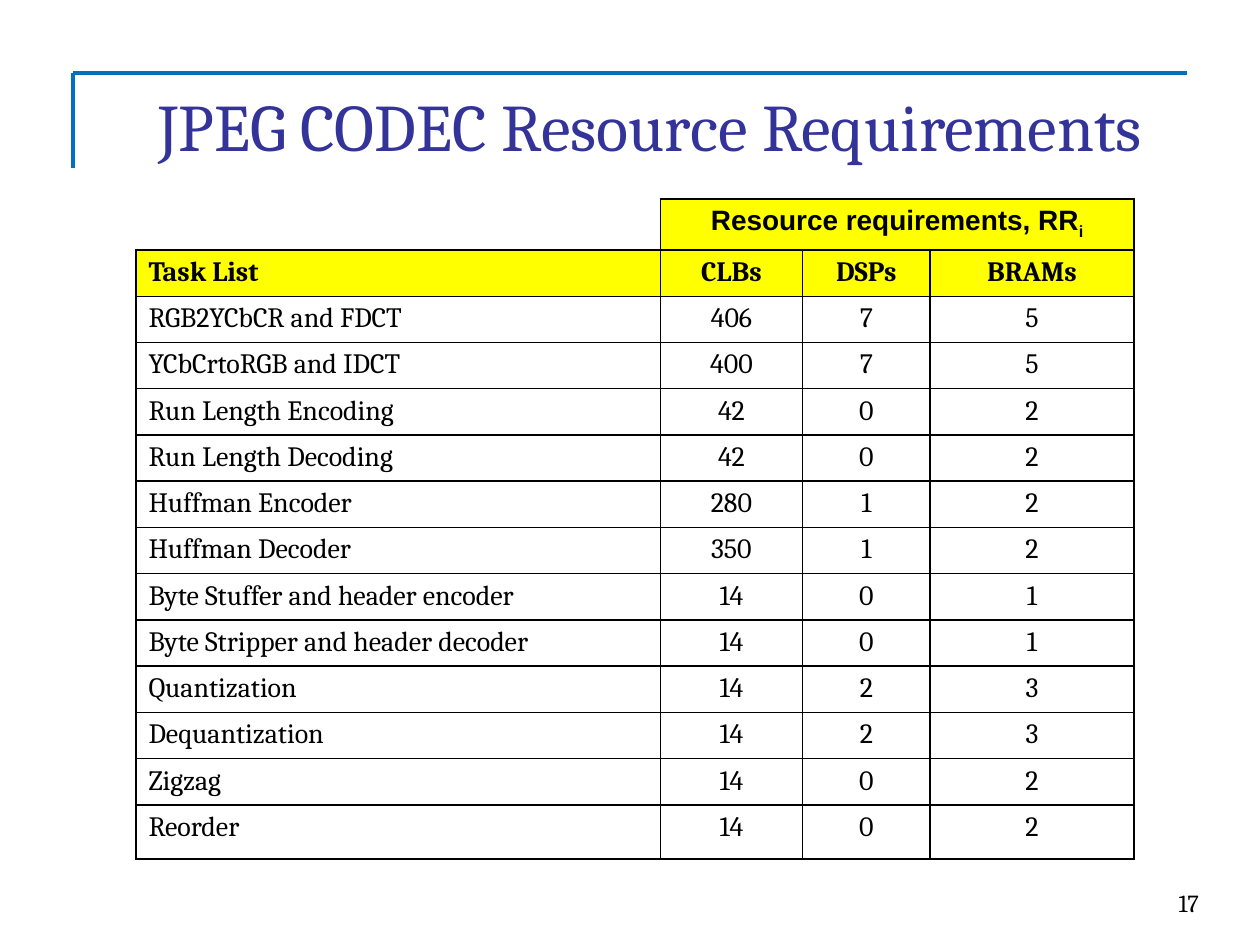
from lxml.etree import SubElement
from pptx import Presentation
from pptx.dml.color import RGBColor
from pptx.enum.shapes import MSO_CONNECTOR
from pptx.enum.text import MSO_ANCHOR, MSO_AUTO_SIZE, PP_ALIGN
from pptx.oxml.ns import qn
from pptx.util import Cm, Pt

TITLE = "JPEG CODEC Resource Requirements"
PAGE_NUMBER = "17 "
GROUP_HEADING = ("Resource requirements, RR", "i")
HEADINGS = ("Task List", "CLBs", "DSPs", "BRAMs")
TASKS = [
    ("RGB2YCbCR and FDCT", 406, 7, 5),
    ("YCbCrtoRGB and IDCT", 400, 7, 5),
    ("Run Length Encoding", 42, 0, 2),
    ("Run Length Decoding", 42, 0, 2),
    ("Huffman Encoder", 280, 1, 2),
    ("Huffman Decoder", 350, 1, 2),
    ("Byte Stuffer and header encoder", 14, 0, 1),
    ("Byte Stripper and header decoder", 14, 0, 1),
    ("Quantization", 14, 2, 3),
    ("Dequantization", 14, 2, 3),
    ("Zigzag", 14, 0, 2),
    ("Reorder", 14, 0, 2),
]

THEME = {
    "font": "Cambria", "group_font": "Arial",
    "title": "333399", "text": "000000", "rule": "0070C0",
    "heading_fill": "FFFF00", "border": "000000",
    "title_size": 38, "table_size": 16, "page_size": 14,
    "rule_width": 2.25, "border_width": 1,
}

CORNER = (1.47, 1.47)
RULE_ENDS = [(23.93, 1.47), (1.47, 3.38)]
TITLE_BOX = (1.47, 1.57, 23.29, 1.88)
PAGE_BOX = (19.25, 17.78, 5.28, 1.27)
TABLE_CORNER = (2.74, 4.01)
COLUMN_WIDTHS = (10.57, 2.87, 2.57, 4.11)
ROW_HEIGHTS = [1.03] + [0.93] * len(TASKS) + [1.09]


def color(role):
    return RGBColor.from_string(THEME[role])


def style(paragraph, size, role="text", align=PP_ALIGN.LEFT, font="font", bold=False):
    paragraph.alignment = align
    paragraph.font.name = THEME[font]
    paragraph.font.size = Pt(THEME[size])
    paragraph.font.bold = bold
    paragraph.font.color.rgb = color(role)


def add_rule(slide, start, end):
    rule = slide.shapes.add_connector(
        MSO_CONNECTOR.STRAIGHT, *(Cm(value) for value in start + end))
    rule.line.color.rgb = color("rule")
    rule.line.width = Pt(THEME["rule_width"])
    SubElement(rule._element.spPr, qn("a:effectLst"))


def set_borders(cell, visible):
    properties = cell._tc.get_or_add_tcPr()
    for side in "LRTB":
        border = SubElement(properties, qn(f"a:ln{side}"))
        border.set("w", str(Pt(THEME["border_width"])))
        if side in visible:
            fill = SubElement(border, qn("a:solidFill"))
            SubElement(fill, qn("a:srgbClr")).set("val", THEME["border"])
        else:
            SubElement(border, qn("a:noFill"))


def add_title(slide):
    title = slide.shapes.title
    title.left, title.top, title.width, title.height = map(Cm, TITLE_BOX)
    title.text_frame.text = TITLE
    title.text_frame.auto_size = MSO_AUTO_SIZE.NONE
    title.text_frame.vertical_anchor = MSO_ANCHOR.MIDDLE
    style(title.text_frame.paragraphs[0], "title_size", "title", PP_ALIGN.CENTER)


def add_page_number(slide):
    page = slide.shapes.add_textbox(*map(Cm, PAGE_BOX)).text_frame
    page.word_wrap = True
    page.text = PAGE_NUMBER
    style(page.paragraphs[0], "page_size", align=PP_ALIGN.RIGHT)


def add_requirements(slide):
    rows = [("",) * len(HEADINGS), HEADINGS] + TASKS
    table = slide.shapes.add_table(
        len(rows), len(HEADINGS), *map(Cm, TABLE_CORNER),
        Cm(sum(COLUMN_WIDTHS)), Cm(sum(ROW_HEIGHTS))).table
    table.first_row = table.horz_banding = False
    for column, width in zip(table.columns, COLUMN_WIDTHS):
        column.width = Cm(width)
    for row, height in zip(table.rows, ROW_HEIGHTS):
        row.height = Cm(height)

    for r, values in enumerate(rows):
        for c, value in enumerate(values):
            cell = table.cell(r, c)
            is_blank_corner = r == c == 0
            cell.text = str(value)
            style(cell.text_frame.paragraphs[0], "table_size",
                  align=PP_ALIGN.CENTER if c else PP_ALIGN.LEFT, bold=r < 2)
            set_borders(cell, "RB" if is_blank_corner else "LRTB")
            if r < 2 and not is_blank_corner:
                cell.fill.solid()
                cell.fill.fore_color.rgb = color("heading_fill")
            else:
                cell.fill.background()

    group = table.cell(0, 1)
    group.merge(table.cell(0, len(HEADINGS) - 1))
    heading = group.text_frame.paragraphs[0]
    for text in GROUP_HEADING:
        run = heading.add_run()
        run.text = text
    run._r.get_or_add_rPr().set("baseline", "-25000")
    style(heading, "table_size", align=PP_ALIGN.CENTER, font="group_font", bold=True)


def main():
    presentation = Presentation()
    presentation.slide_width, presentation.slide_height = Cm(25.4), Cm(19.05)
    slide = presentation.slides.add_slide(presentation.slide_layouts[5])
    for end in RULE_ENDS:
        add_rule(slide, CORNER, end)
    add_title(slide)
    add_page_number(slide)
    add_requirements(slide)
    presentation.save("out.pptx")


if __name__ == "__main__":
    main()
